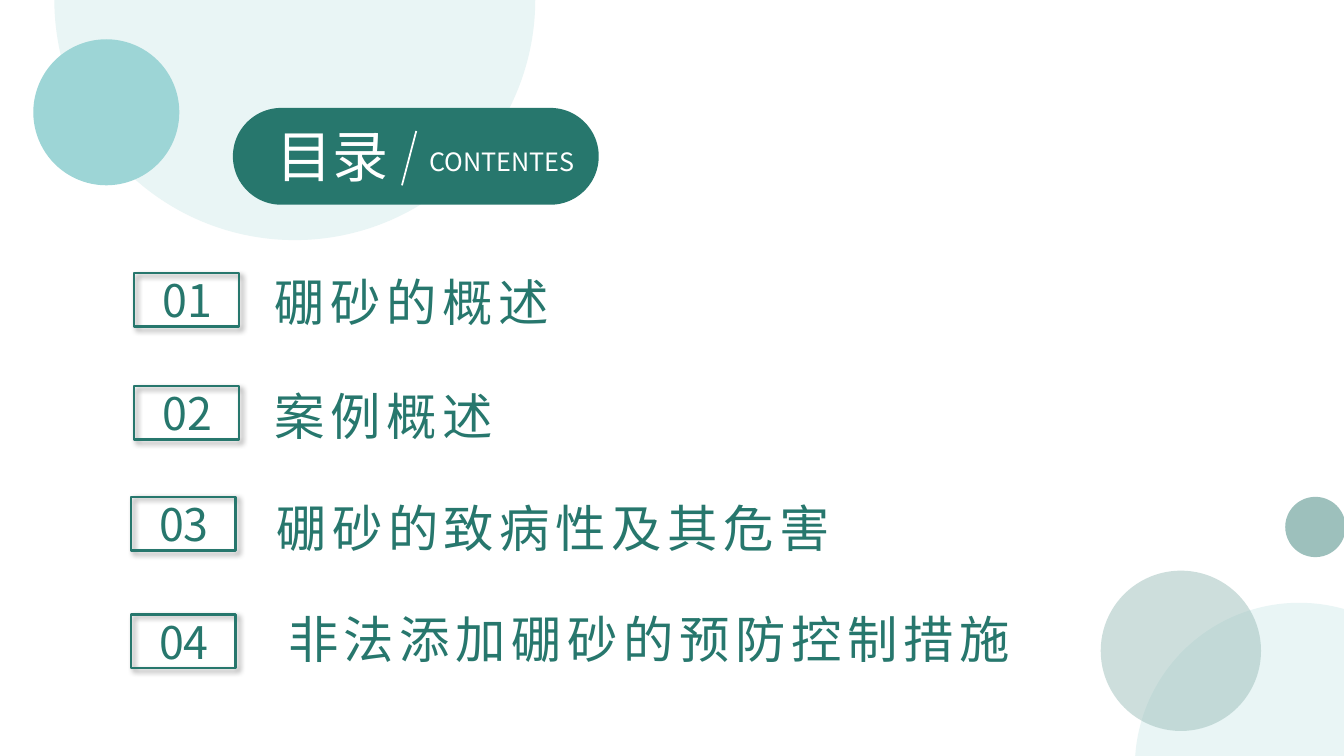
from dataclasses import dataclass

from lxml.etree import SubElement
from pptx import Presentation
from pptx.dml.color import RGBColor
from pptx.enum.shapes import MSO_CONNECTOR, MSO_SHAPE
from pptx.enum.text import MSO_AUTO_SIZE, PP_ALIGN
from pptx.oxml.ns import qn
from pptx.util import Cm, Pt

FONT = "Noto Sans CJK SC"
WHITE = RGBColor(0xFF, 0xFF, 0xFF)
GREEN = RGBColor(0x27, 0x77, 0x6D)
MINT = RGBColor(0xE9, 0xF5, 0xF5)
AQUA = RGBColor(0x9D, 0xD5, 0xD6)
SAGE = RGBColor(0x9D, 0xC0, 0xBC)


@dataclass(frozen=True)
class Circle:
    left: float
    top: float
    diameter: float
    color: RGBColor
    opacity: int = 100


@dataclass(frozen=True)
class Chapter:
    title: str
    badge_left: float
    badge_top: float
    title_left: float
    title_top: float
    title_width: float


TOP_CIRCLES = [
    Circle(1.37, -6.07, 12.12, MINT),
    Circle(0.84, 0.99, 3.68, AQUA),
]
BOTTOM_CIRCLES = [
    Circle(28.6, 15.19, 8.28, MINT),
    Circle(32.39, 12.52, 1.52, SAGE),
    Circle(27.74, 14.38, 4.04, SAGE, opacity=51),
]
CHAPTERS = [
    Chapter("硼砂的概述", 3.38, 6.88, 6.68, 6.71, 23.75),
    Chapter("案例概述", 3.38, 9.73, 6.68, 9.58, 24.94),
    Chapter("硼砂的致病性及其危害", 3.3, 12.52, 6.71, 12.4, 23.37),
    Chapter("非法添加硼砂的预防控制措施", 3.3, 15.49, 7.01, 15.19, 23.42),
]


def add_circle(shapes, circle: Circle) -> None:
    size = Cm(circle.diameter)
    disc = shapes.add_shape(MSO_SHAPE.OVAL, Cm(circle.left), Cm(circle.top), size, size)
    disc.shadow.inherit = False
    disc.fill.solid()
    disc.fill.fore_color.rgb = circle.color
    disc.line.fill.background()
    if circle.opacity < 100:
        color = disc.fill._xPr.find(f".//{qn('a:srgbClr')}")
        SubElement(color, qn("a:alpha"), val=str(circle.opacity * 1000))


def add_text(shapes, text: str, left: float, top: float, width: float, height: float,
             size: int, color: RGBColor, align: PP_ALIGN = PP_ALIGN.LEFT,
             spacing: int = 0) -> None:
    """Add one line of text; spacing is the gap between letters in points."""
    box = shapes.add_textbox(Cm(left), Cm(top), Cm(width), Cm(height))
    frame = box.text_frame
    frame.word_wrap = True
    frame.auto_size = MSO_AUTO_SIZE.SHAPE_TO_FIT_TEXT
    para = frame.paragraphs[0]
    para.text = text
    para.alignment = align
    font = para.font
    font.name = FONT
    font.size = Pt(size)
    font.color.rgb = color
    SubElement(font._element, qn("a:ea"), typeface=FONT)
    if spacing:
        font._element.set("spc", str(spacing * 100))


def add_drop_shadow(shape) -> None:
    shape.shadow.inherit = False
    effects = shape._element.spPr.find(qn("a:effectLst"))
    shadow = SubElement(effects, qn("a:outerShdw"), blurRad=str(Pt(4)), dist=str(Pt(3)),
                        dir=str(45 * 60000), algn="tl", rotWithShape="0")
    color = SubElement(shadow, qn("a:srgbClr"), val="000000")
    SubElement(color, qn("a:alpha"), val="40000")


def add_heading(page) -> None:
    shapes = page.shapes.add_group_shape().shapes
    pill = shapes.add_shape(MSO_SHAPE.ROUNDED_RECTANGLE, Cm(5.87), Cm(2.72), Cm(9.22), Cm(2.44))
    pill.adjustments[0] = 0.5
    pill.shadow.inherit = False
    pill.fill.solid()
    pill.fill.fore_color.rgb = GREEN
    pill.line.fill.background()
    add_text(shapes, "目录", 6.71, 2.95, 3.43, 1.96, 40, WHITE)
    slash = shapes.add_connector(MSO_CONNECTOR.STRAIGHT, Cm(10.13), Cm(4.67), Cm(10.49), Cm(3.3))
    slash.line.color.rgb = WHITE
    slash.line.width = Pt(1.25)
    SubElement(slash._element.spPr, qn("a:effectLst"))
    add_text(shapes, "CONTENTES", 10.57, 3.56, 4.52, 1.02, 18, WHITE)


def add_chapter(page, number: int, chapter: Chapter) -> None:
    left, top = chapter.badge_left, chapter.badge_top
    shapes = page.shapes.add_group_shape().shapes
    badge = shapes.add_shape(MSO_SHAPE.RECTANGLE, Cm(left), Cm(top), Cm(2.64), Cm(1.35))
    badge.fill.background()
    badge.line.color.rgb = GREEN
    badge.line.width = Pt(1.75)
    add_drop_shadow(badge)
    add_text(shapes, f"{number:02}", left + 0.08, top - 0.13, 2.51, 1.63, 32, GREEN,
             PP_ALIGN.CENTER)
    add_text(page.shapes, chapter.title, chapter.title_left, chapter.title_top,
             chapter.title_width, 1.8, 36, GREEN, spacing=4)


def main() -> None:
    deck = Presentation()
    deck.slide_width, deck.slide_height = Cm(33.87), Cm(19.05)
    page = deck.slides.add_slide(deck.slide_layouts[6])
    for circle in TOP_CIRCLES:
        add_circle(page.shapes, circle)
    add_heading(page)
    for number, chapter in enumerate(CHAPTERS, start=1):
        add_chapter(page, number, chapter)
    for circle in BOTTOM_CIRCLES:
        add_circle(page.shapes, circle)
    deck.save("out.pptx")


if __name__ == "__main__":
    main()
